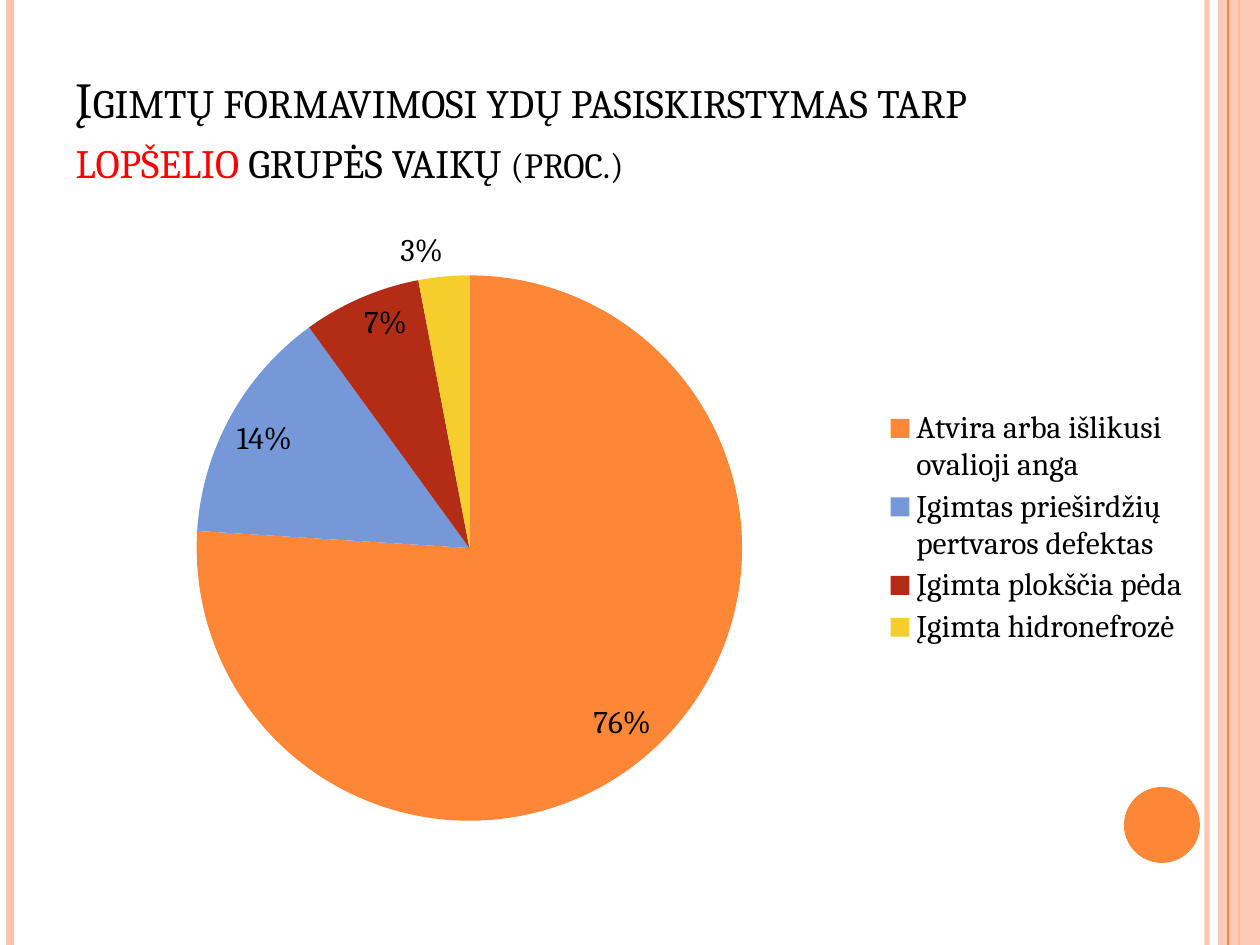
"""Builds the slide on congenital defects among nursery children."""
from dataclasses import dataclass

from lxml.etree import SubElement
from pptx import Presentation
from pptx.chart.data import CategoryChartData
from pptx.dml.color import RGBColor
from pptx.enum.chart import XL_CHART_TYPE as Kind
from pptx.enum.chart import XL_LABEL_POSITION as Spot
from pptx.enum.chart import XL_LEGEND_POSITION as Side
from pptx.enum.shapes import MSO_CONNECTOR as Link
from pptx.enum.shapes import MSO_SHAPE as Shape
from pptx.enum.text import MSO_ANCHOR as Anchor
from pptx.enum.text import MSO_AUTO_SIZE as Fit
from pptx.enum.text import PP_ALIGN as Align
from pptx.oxml import parse_xml
from pptx.oxml.ns import nsdecls, qn
from pptx.util import Pt


@dataclass(frozen=True)
class Theme:
    font: str = "Cambria"
    ink: str = "000000"
    red: str = "FF0000"
    orange: str = "FE8637"
    pale: str = "FEC3AE"
    head: float = 28.8
    note: float = 25.2
    body: float = 18


T = Theme()
WIDE, HIGH = 1260, 945
TITLE = [
    ("Įgimtų formavimosi ydų pasiskirstymas tarp ", T.ink, T.head),
    ("lopšelio", T.red, T.head),
    (" grupės vaikų ", T.ink, T.head),
    ("(proc.)", T.ink, T.note),
]
SLICES = [
    ("Atvira arba išlikusi ovalioji anga", 0.76, T.orange, Spot.INSIDE_END),
    ("Įgimtas prieširdžių pertvaros defektas", 0.14, "7598D9", Spot.INSIDE_END),
    ("Įgimta plokščia pėda", 0.07, "B32C16", Spot.INSIDE_END),
    ("Įgimta hidronefrozė", 0.03, "F5CD2D", Spot.OUTSIDE_END),
]
TITLE_BOX = (63, 38, 1029, 157)
CHART_BOX = (64, 214, 1134, 624)
PIE_BOX = (197, 275, 546, 546)
KEY_BOX = (880, 405, 312, 246)
BAND_BOX = (1218, 0, 42, HIGH)
DOT_BOX = (1124, 787, 76, 76)
BACK_RULES = [(1207, T.pale, 3, 93), (10, T.pale, 4.5, 100), (1239, T.orange, 1.5, 100)]
FRONT_RULES = [(1228, T.orange, 0.75, 100)]


def px(n):
    return int(n * 914400 / 126)


def paint(fill, color, alpha=100):
    fill.solid()
    fill.fore_color.rgb = RGBColor.from_string(color)
    return alpha


def fade(node, alpha):
    if alpha < 100:
        tint = next(node.iter(qn("a:srgbClr")))
        SubElement(tint, qn("a:alpha")).set("val", str(alpha * 1000))


def style(font, color, size):
    font.name, font.size = T.font, Pt(size)
    font.color.rgb = RGBColor.from_string(color)


def write(para, text, color=T.ink, size=T.body, small=False):
    run = para.add_run()
    run.text = text
    style(run.font, color, size)
    run.font.bold = False
    if small:
        run.font._element.set("cap", "small")


def rule(slide, x, color, width, alpha):
    line = slide.shapes.add_connector(Link.STRAIGHT, px(x), 0, px(x), px(HIGH))
    line.line.width = Pt(width)
    paint(line.line.fill, color)
    props = line._element.spPr
    fade(props, alpha)
    SubElement(props, qn("a:effectLst"))


def block(slide, kind, box, color, alpha=100):
    shape = slide.shapes.add_shape(kind, *map(px, box))
    shape.shadow.inherit = False
    paint(shape.fill, color)
    shape.line.fill.background()
    fade(shape._element.spPr, alpha)


def place(box, inner=False):
    left, top, wide, high = CHART_BOX
    x, y, w, h = box
    parts = [("xMode", "edge"), ("yMode", "edge"),
             ("x", round((x - left) / wide, 3)), ("y", round((y - top) / high, 3)),
             ("w", round(w / wide, 3)), ("h", round(h / high, 3))]
    if inner:
        parts.insert(0, ("layoutTarget", "inner"))
    body = "".join(f'<c:{tag} val="{val}"/>' for tag, val in parts)
    return parse_xml(f'<c:layout {nsdecls("c")}><c:manualLayout>{body}'
                     "</c:manualLayout></c:layout>")


def head(slide):
    title = slide.shapes.title
    title.left, title.top, title.width, title.height = map(px, TITLE_BOX)
    frame = title.text_frame
    frame.word_wrap, frame.auto_size = True, Fit.NONE
    frame.vertical_anchor = Anchor.BOTTOM
    para = frame.paragraphs[0]
    para.alignment = Align.LEFT
    for text, color, size in TITLE:
        write(para, text, color=color, size=size, small=True)


def pie(slide):
    data = CategoryChartData(number_format="0%")
    data.categories = [row[0] for row in SLICES]
    data.add_series("Series 1", [row[1] for row in SLICES])
    chart = slide.shapes.add_chart(Kind.PIE, *map(px, CHART_BOX), data).chart
    style(chart.font, T.ink, T.body)
    chart.has_title = False
    chart.has_legend = True
    chart.legend.position = Side.RIGHT
    chart.legend.include_in_layout = False
    plot = chart.plots[0]
    plot.vary_by_categories = True
    series = plot.series[0]
    labels = series.data_labels
    labels.show_value = True
    labels.number_format, labels.number_format_is_linked = "0%", False
    style(labels.font, T.ink, T.body)
    for i, (_, _, color, spot) in enumerate(SLICES):
        point = series.points[i]
        paint(point.format.fill, color)
        point.data_label.position = spot
        style(point.data_label.font, T.ink, T.body)
    area = chart._chartSpace.chart.plotArea
    for old in area.findall(qn("c:layout")):
        area.remove(old)
    area.insert(0, place(PIE_BOX, inner=True))
    key = chart.legend._element
    for old in key.findall(qn("c:layout")):
        key.remove(old)
    key.find(qn("c:legendPos")).addnext(place(KEY_BOX))


def main():
    deck = Presentation()
    deck.slide_width, deck.slide_height = px(WIDE), px(HIGH)
    slide = deck.slides.add_slide(deck.slide_layouts[5])
    for row in BACK_RULES:
        rule(slide, *row)
    block(slide, Shape.RECTANGLE, BAND_BOX, T.pale, alpha=87)
    for row in FRONT_RULES:
        rule(slide, *row)
    block(slide, Shape.OVAL, DOT_BOX, T.orange)
    head(slide)
    pie(slide)
    deck.save("out.pptx")


if __name__ == "__main__":
    main()
